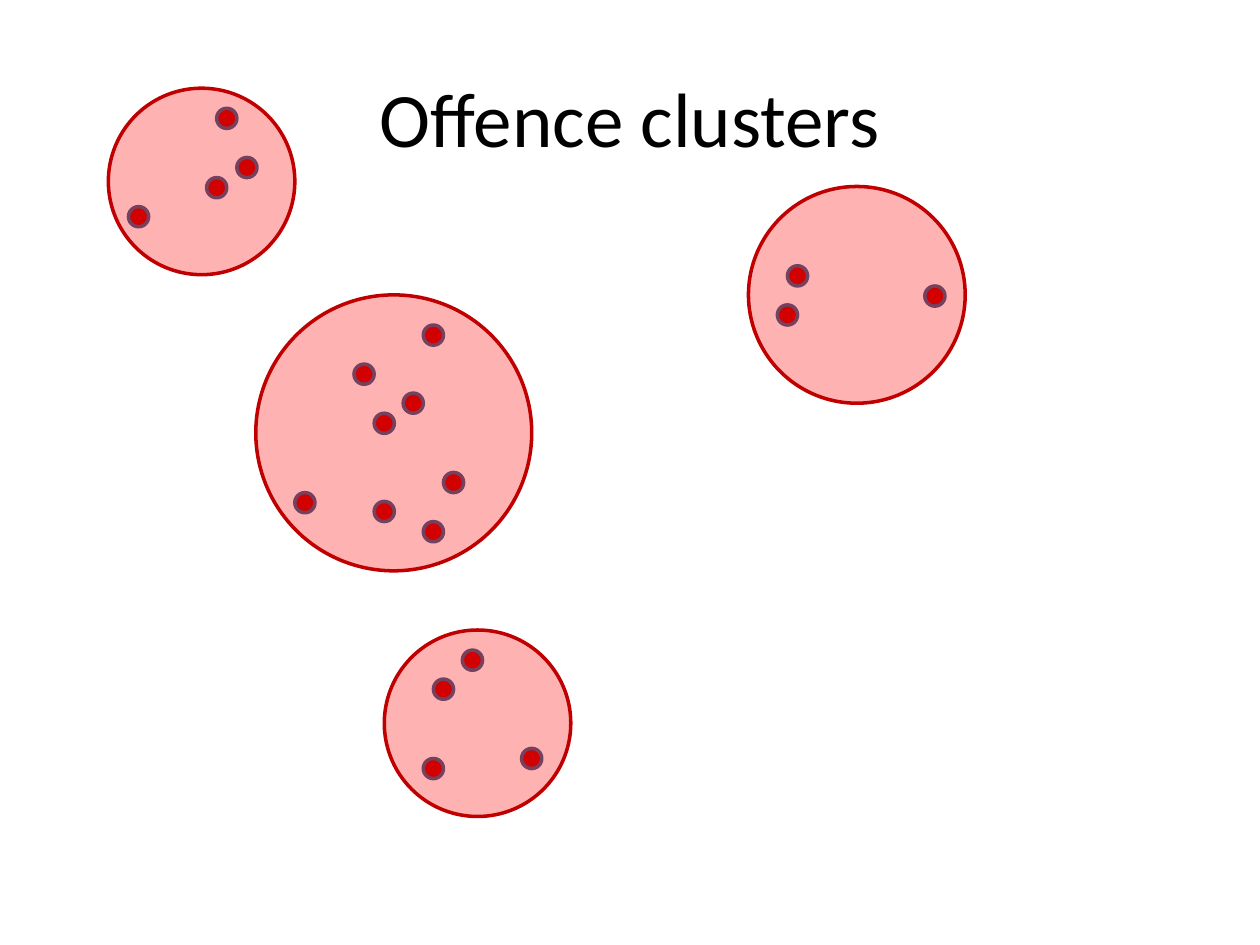
from lxml.etree import SubElement
from pptx import Presentation
from pptx.dml.color import RGBColor
from pptx.enum.shapes import MSO_SHAPE
from pptx.enum.text import MSO_ANCHOR, PP_ALIGN
from pptx.oxml.ns import qn
from pptx.util import Inches, Pt

COLORS = {"text": "000000", "dot": "C00000", "rim": "395E89",
          "zone": "FF0000", "edge": "C00000"}
DOT = 0.16

# Each cluster: left, top, size of its zone, and left, top of its dots
CLUSTERS = [
    (0.86, 0.7, 1.48,
     [(1.64, 1.41), (1.88, 1.25), (1.02, 1.64), (1.72, 0.86)]),
    (2.03, 2.34, 2.19,
     [(2.81, 2.89), (3.2, 3.12), (2.97, 3.28), (2.97, 3.98),
      (3.52, 3.75), (3.36, 4.14), (3.36, 2.58), (2.34, 3.91)]),
    (5.94, 1.48, 1.72,
     [(6.25, 2.11), (7.34, 2.27), (6.17, 2.42)]),
    (3.05, 5, 1.48,
     [(3.44, 5.39), (3.67, 5.16), (4.14, 5.94), (3.36, 6.02)]),
]


class Deck:
    font = "Calibri"
    size = Pt(44)
    line = Pt(2)

    def __init__(self, slide):
        self.slide = slide

    def color(self, name):
        return RGBColor.from_string(COLORS[name])

    def title(self, text, left, top, width, height):
        box = self.slide.shapes.title
        box.left, box.top = Inches(left), Inches(top)
        box.width, box.height = Inches(width), Inches(height)
        frame = box.text_frame
        frame.text = text
        frame.vertical_anchor = MSO_ANCHOR.MIDDLE
        para = frame.paragraphs[0]
        para.alignment = PP_ALIGN.CENTER
        para.font.name, para.font.size = self.font, self.size
        para.font.color.rgb = self.color("text")

    def group(self):
        return self.slide.shapes.add_group_shape()

    def circle(self, group, left, top, size, fill, line, alpha=None):
        shape = group.shapes.add_shape(
            MSO_SHAPE.OVAL, Inches(left), Inches(top),
            Inches(size), Inches(size))
        shape.shadow.inherit = False
        shape.fill.solid()
        shape.fill.fore_color.rgb = self.color(fill)
        shape.line.color.rgb = self.color(line)
        shape.line.width = self.line
        if alpha is not None:
            tint = shape.fill._xPr.find(qn("a:solidFill"))[0]
            SubElement(tint, qn("a:alpha"), val=str(alpha * 1000))


def main():
    prs = Presentation()
    prs.slide_width, prs.slide_height = Inches(10), Inches(7.5)
    deck = Deck(prs.slides.add_slide(prs.slide_layouts[5]))

    deck.title("Offence clusters", 0.5, 0.3, 9, 1.25)

    # Offences
    dots = deck.group()
    for *_, spots in CLUSTERS:
        for left, top in spots:
            deck.circle(dots, left, top, DOT, "dot", "rim")

    # See-through zones on top
    zones = deck.group()
    for left, top, size, _ in CLUSTERS:
        deck.circle(zones, left, top, size, "zone", "edge", alpha=30)

    prs.save("out.pptx")


if __name__ == "__main__":
    main()
